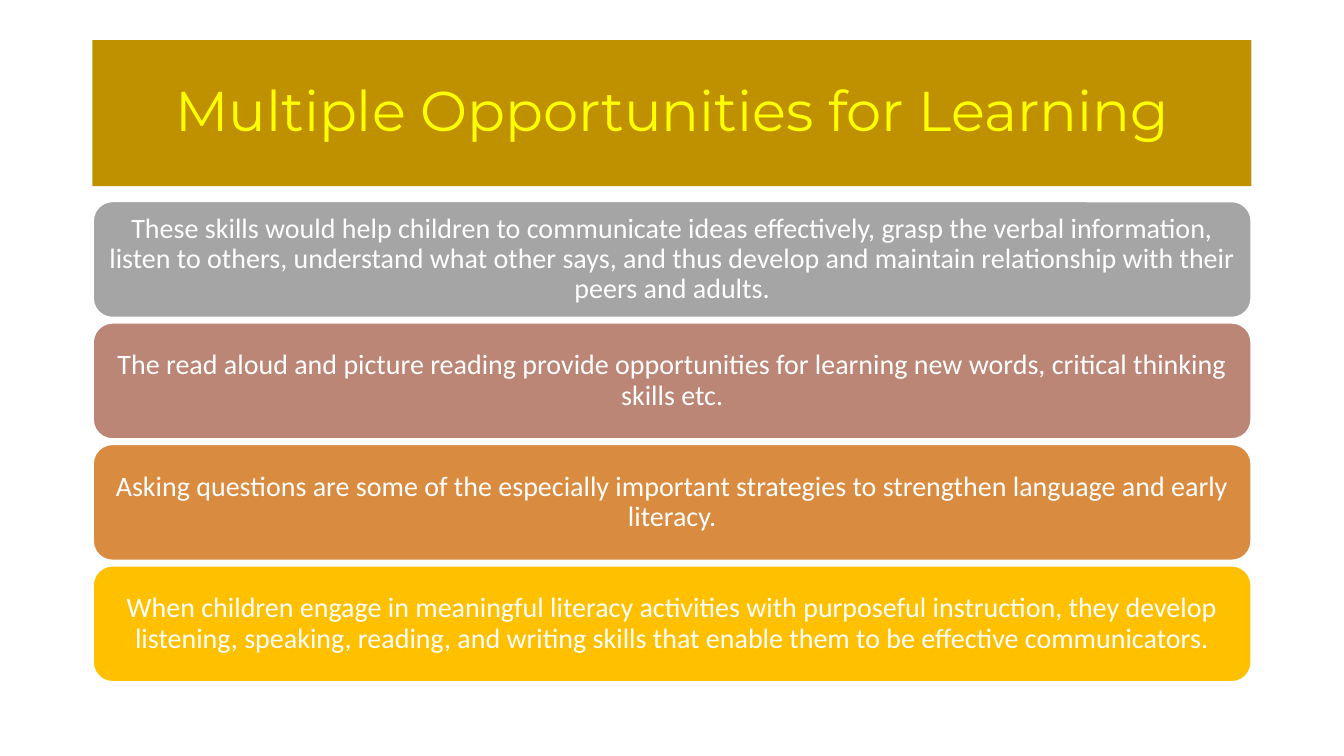
import pptx
import pptx.dml.color
import pptx.enum.shapes
import pptx.enum.text
import pptx.util

Cm = pptx.util.Cm
RGBColor = pptx.dml.color.RGBColor
Shapes = pptx.enum.shapes.MSO_SHAPE

WHITE = RGBColor(0xFF, 0xFF, 0xFF)
YELLOW = RGBColor(0xFF, 0xFF, 0x00)
DARK_GOLD = RGBColor(0xBF, 0x90, 0x00)
GREY = RGBColor(0xA5, 0xA5, 0xA5)
ROSE = RGBColor(0xBB, 0x86, 0x76)
ORANGE = RGBColor(0xD9, 0x8B, 0x3F)
GOLD = RGBColor(0xFF, 0xC0, 0x00)

TITLE = "Multiple Opportunities for Learning"
OPPORTUNITIES = [
    ("These skills would help children to communicate ideas effectively, grasp the "
     "verbal information, listen to others, understand what other says, and thus "
     "develop and maintain relationship with their peers and adults.", GREY),
    ("The read aloud and picture reading provide opportunities for learning new "
     "words, critical thinking skills etc.", ROSE),
    ("Asking questions are some of the especially important strategies to strengthen "
     "language and early literacy.", ORANGE),
    ("When children engage in meaningful literacy activities with purposeful "
     "instruction, they develop listening, speaking, reading, and writing skills that "
     "enable them to be effective communicators.", GOLD),
]

TITLE_FONT = {"name": "Montserrat", "size": pptx.util.Pt(40)}
BODY_FONT = {"name": "Calibri", "size": pptx.util.Pt(20)}
FRAME_FORMAT = {
    "word_wrap": True,
    "vertical_anchor": pptx.enum.text.MSO_ANCHOR.MIDDLE,
    "margin_left": Cm(0.2),
    "margin_right": Cm(0.2),
    "margin_top": Cm(0.1),
    "margin_bottom": Cm(0.1),
}
PARAGRAPH_FORMAT = {"alignment": pptx.enum.text.PP_ALIGN.CENTER, "line_spacing": 0.9}


def set_attributes(target, values):
    for name, value in values.items():
        setattr(target, name, value)


def add_filled_text(slide, preset, box, fill_color, text, font, text_color):
    """Add a filled shape with centred text and return it without an outline."""
    shape = slide.shapes.add_shape(preset, *(Cm(length) for length in box))
    shape.shadow.inherit = False
    shape.fill.solid()
    shape.fill.fore_color.rgb = fill_color
    shape.line.fill.background()
    set_attributes(shape.text_frame, FRAME_FORMAT)
    paragraph = shape.text_frame.paragraphs[0]
    paragraph.text = text
    set_attributes(paragraph, PARAGRAPH_FORMAT)
    set_attributes(paragraph.font, font)
    paragraph.font.color.rgb = text_color
    return shape


def add_title(slide, box):
    add_filled_text(slide, Shapes.RECTANGLE, box, DARK_GOLD, TITLE, TITLE_FONT, YELLOW)


def add_opportunities(slide, box, gap=0.14):
    """Stack one rounded bar per opportunity, evenly spaced over the box."""
    left, top, width, height = box
    pitch = (height + gap) / len(OPPORTUNITIES)
    for index, (text, color) in enumerate(OPPORTUNITIES):
        bar_box = (left, top + index * pitch, width, pitch - gap)
        bar = add_filled_text(slide, Shapes.ROUNDED_RECTANGLE, bar_box, color,
                              text, BODY_FONT, WHITE)
        bar.line.color.rgb = WHITE
        bar.line.width = pptx.util.Pt(1)


def main():
    presentation = pptx.Presentation()
    presentation.slide_width = Cm(33.87)
    presentation.slide_height = Cm(19.05)
    slide = presentation.slides.add_slide(presentation.slide_layouts[6])
    add_title(slide, (2.33, 1.01, 29.21, 3.68))
    add_opportunities(slide, (2.35, 5.08, 29.18, 12.1))
    presentation.save("out.pptx")


if __name__ == "__main__":
    main()
